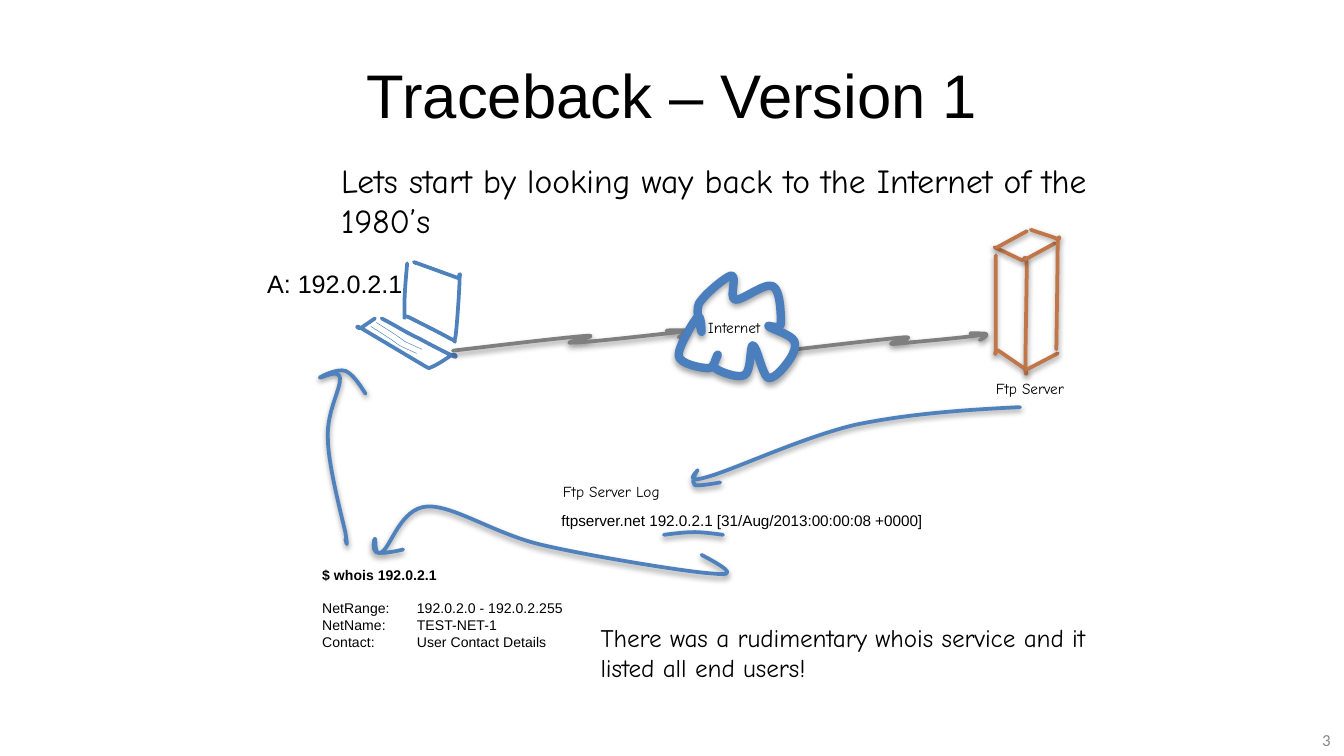
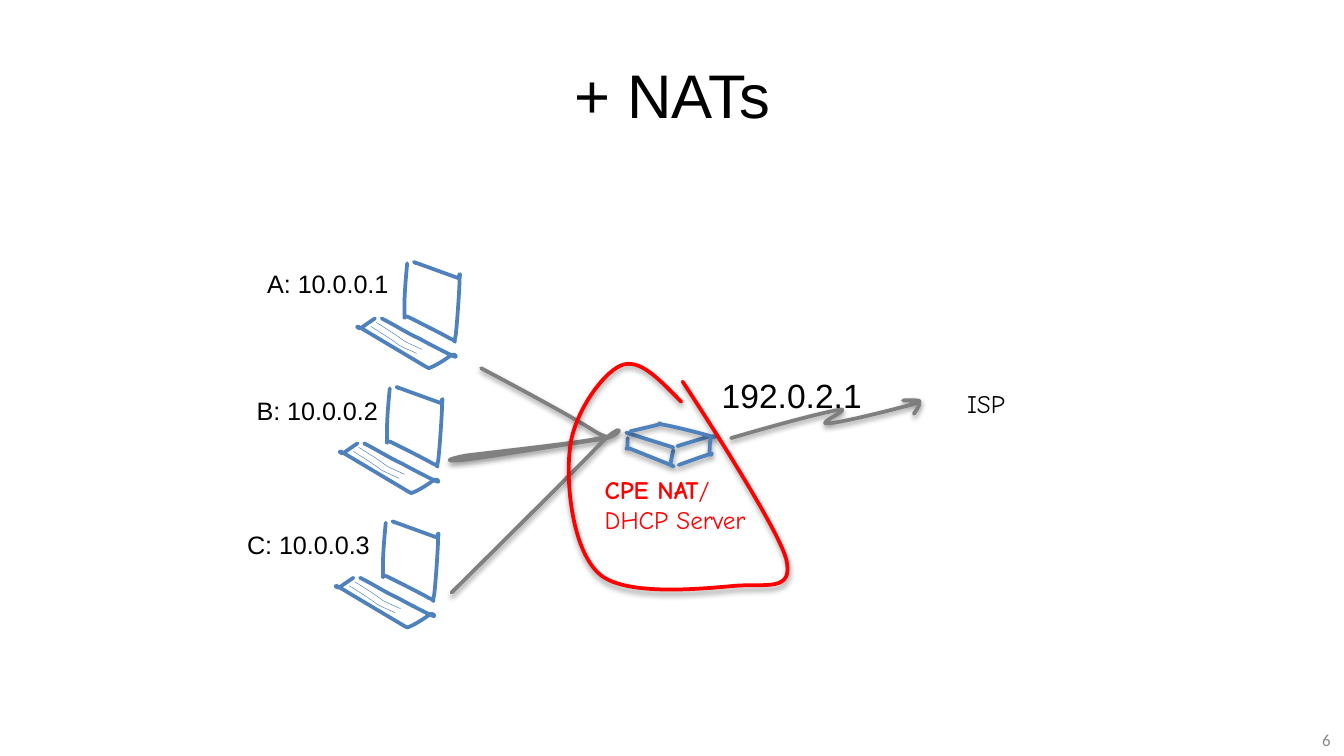
from lxml.etree import SubElement
from pptx import Presentation
from pptx.dml.color import RGBColor
from pptx.enum.text import MSO_ANCHOR as Anchor, MSO_AUTO_SIZE as AutoSize, PP_ALIGN as Align
from pptx.oxml.ns import qn
from pptx.util import Cm, Pt

BLUE, CLOUD_BLUE, ORANGE, GREY, MID_GREY, RED, BLACK, PALE = (
    "4F81BD", "4B7EBC", "C1764A", "7F7F7F", "808080", "FF0000", "000000", "898989")
SANS, HAND, FOOTER_FONT = "Arial", "Comic Neue", "Calibri"
GRID = 0.0254  # sketch unit in cm

# Sketches: M start, C cubic curves, L straight segments, Z close
LAPTOP_OUTLINE = [
    "M 303 196 C 302 207 301 218 301 225 301 231 301 234 301 236 302 238 298 234 304 236 "
    "310 239 330 249 335 252 341 254 337 257 339 250 340 243 342 214 342 207 "
    "343 200 341 207 341 207 L 308 195 310 196",
    "M 284 237 C 294 242 303 248 312 252 321 257 333 263 337 265 341 267 339 263 336 264 "
    "334 266 323 273 319 274 L 317 273 270 245 C 262 240 267 246 269 244 270 243 279 237 279 237",
]
KEY_ROW = "M 276 243 C 284 248 292 253 297 257 303 260 310 263 310 263"
KEY_ROW_STEP = (4, -3)

SERVER = [
    "M 741 190 C 741 219 741 247 741 259 741 270 739 258 743 261 746 263 759 272 762 274 "
    "765 275 763 285 763 272 763 259 764 211 764 198 763 185 763 196 759 193 755 191 740 184 740 184",
    "M 763 193 L 785 181",
    "M 764 275 L 787 263",
    "M 742 184 L 764 172",
    "M 767 171 C 775 174 783 176 787 178 790 180 787 170 787 184 787 197 786 260 786 260",
]
CLOUD = (
    "M 581 241 C 581 236 581 216 575 213 569 210 552 224 547 223 542 222 549 205 544 205 "
    "540 206 524 219 520 226 517 233 522 246 522 247 522 249 522 233 519 236 516 239 504 259 505 265 "
    "506 271 522 274 527 274 532 274 533 264 534 264 535 264 529 271 532 274 536 277 550 282 554 279 "
    "559 277 558 257 560 257 563 257 567 278 571 281 575 283 582 275 585 271 589 266 593 259 591 254 "
    "589 249 574 245 572 243 570 241 580 246 581 241 Z")
LAPTOP_LINK = (
    "M 337 261 C 379 256 422 251 436 250 451 249 414 256 426 255 438 255 496 248 508 247 "
    "519 245 495 246 496 246 496 246 509 246 511 247 512 248 505 251 505 251")
SERVER_LINK = (
    "M 592 260 C 626 256 661 252 673 251 685 251 655 256 665 256 674 255 722 251 731 249 "
    "741 248 721 248 722 248 722 248 732 249 734 249 735 250 729 253 729 253")
SERVER_TO_LOG = (
    "M 759 303 C 717 305 676 308 637 316 598 325 545 350 526 355 506 361 521 349 519 350 "
    "518 351 514 359 517 361 520 362 536 359 536 359")
LOG_UNDERLINE = "M 494 398 C 502 397 510 396 517 396 524 396 538 398 538 398"
LOG_TO_WHOIS = (
    "M 522 413 C 537 421 551 429 532 427 512 426 440 414 405 406 369 398 338 376 318 377 "
    "298 378 291 407 284 411 278 415 280 401 279 401 278 401 277 410 280 411 284 413 300 409 300 409")
WHOIS_TO_LAPTOP = (
    "M 257 401 C 258 405 259 409 257 396 254 383 244 345 244 326 243 306 254 289 253 281 "
    "252 274 238 282 238 281 239 280 251 274 257 276 262 278 267 285 272 293")
ROUTER = [
    "M 467 326 C 467 329 467 333 467 334 467 335 464 332 469 334 474 336 494 344 499 346 "
    "504 348 499 347 499 345 499 344 501 335 501 335",
    "M 466 322 L 501 333",
    "M 504 332 L 527 325",
    "M 469 321 C 477 319 486 317 490 316 494 315 487 314 493 316 500 317 524 323 530 325 "
    "536 326 529 323 529 326 528 328 528 336 528 338 528 340 532 336 528 338 524 339 505 346 505 346",
]
HOME_LINKS = (
    "M 358 274 C 392 292 427 311 441 320 455 329 458 323 442 327 426 330 363 337 347 339 "
    "331 342 330 344 347 342 364 340 431 329 447 327 464 325 466 311 447 330 429 349 336 441 336 441")
ISP_LINK = (
    "M 544 326 C 578 316 612 307 624 305 636 303 606 316 616 315 625 315 672 303 682 300 "
    "691 297 672 298 672 298 672 298 683 298 684 300 685 301 680 308 680 308")
NAT_LOOP = (
    "M 507 299 C 491 283 476 266 462 272 448 278 426 309 424 335 421 360 426 411 447 428 "
    "467 444 524 438 547 436 570 434 591 441 585 416 578 390 508 284 508 284")


def color(hex_code):
    return RGBColor.from_string(hex_code)


def apply(target, values):
    for key, value in values.items():
        setattr(target, key, value)


def trace(sketch):
    """Return the points, the kind of each segment, and whether the sketch is closed."""
    points, kinds, command, pending = [], [], "M", []
    for token in sketch.split():
        if token.isalpha():
            command = token
            continue
        pending.append(int(token))
        if len(pending) == (6 if command == "C" else 2):
            points += zip(pending[::2], pending[1::2])
            kinds.append(command)
            pending = []
    return points, kinds[1:], command == "Z"


def bend(outline, kinds):
    """Join each three line segments that belong to a curve into one cubic curve."""
    segments = iter(outline.findall(".//" + qn("a:lnTo")))
    for kind in kinds:
        first = next(segments)
        if kind == "C":
            first.tag = qn("a:cubicBezTo")
            for _ in range(2):
                following = next(segments)
                first.append(following[0])
                following.getparent().remove(following)


class Deck:
    def __init__(self):
        self.prs = Presentation()
        apply(self.prs, {"slide_width": Cm(25.4), "slide_height": Cm(14.29)})
        self.slide = None

    def new_slide(self, heading, number):
        self.slide = self.prs.slides.add_slide(self.prs.slide_layouts[5])
        title = self.slide.shapes.title
        apply(title, {"left": Cm(0.74), "top": Cm(0.58), "width": Cm(23.93), "height": Cm(2.39)})
        title.text_frame.text = heading
        title.text_frame.vertical_anchor = Anchor.MIDDLE
        paragraph = title.text_frame.paragraphs[0]
        paragraph.alignment = Align.CENTER
        self.style(paragraph.runs[0].font, 33, SANS)
        footer = self.text((19.48, 13.61, 5.92, 0.76), [number], 9, FOOTER_FONT, PALE, wrap=True)
        apply(footer, {"auto_size": AutoSize.NONE, "vertical_anchor": Anchor.MIDDLE})
        footer.paragraphs[0].alignment = Align.RIGHT

    def style(self, font, size, face, ink=BLACK, bold=False):
        apply(font, {"size": Pt(size), "name": face, "bold": bold})
        font.color.rgb = color(ink)

    def text(self, box, lines, size, face=SANS, ink=BLACK, wrap=False, bold_lead=False):
        """Each line is a string, or a tuple of strings for several runs."""
        frame = self.slide.shapes.add_textbox(*map(Cm, box)).text_frame
        apply(frame, {"word_wrap": wrap, "auto_size": AutoSize.SHAPE_TO_FIT_TEXT})
        for row, line in enumerate(lines):
            paragraph = frame.add_paragraph() if row else frame.paragraphs[0]
            for part, words in enumerate((line,) if isinstance(line, str) else line):
                run = paragraph.add_run()
                run.text = words
                self.style(run.font, size, face, ink, bold_lead and row == part == 0)
        return frame

    def stroke(self, sketch, ink, width=2, shift=(0, 0), shadow=(38, 1.6)):
        """Draw a hand-drawn line; shadow is opacity in percent and distance in points."""
        points, kinds, closed = trace(sketch)
        start, *rest = [(Cm((x + shift[0]) * GRID), Cm((y + shift[1]) * GRID)) for x, y in points]
        builder = self.slide.shapes.build_freeform(*start)
        builder.add_line_segments(rest, close=closed)
        line = builder.convert_to_shape()
        line.fill.background()
        line.line.color.rgb = color(ink)
        line.line.width = Pt(width)
        line.shadow.inherit = False
        properties = line._element.spPr
        bend(properties, kinds)
        properties.find(qn("a:ln")).set("cap", "rnd")
        if shadow:
            opacity, distance = shadow
            outer = SubElement(properties.find(qn("a:effectLst")), qn("a:outerShdw"), blurRad=str(Pt(3.1)),
                               dist=str(Pt(distance)), dir="5400000", rotWithShape="0")
            black = SubElement(outer, qn("a:srgbClr"), val=BLACK)
            SubElement(black, qn("a:alpha"), val=str(opacity * 1000))
        return line

    def drawing(self, sketches, ink):
        self.slide.shapes.add_group_shape([self.stroke(s, ink) for s in sketches])

    def laptop(self, dx=0, dy=0):
        strokes = [self.stroke(s, BLUE, shift=(dx, dy), shadow=None) for s in LAPTOP_OUTLINE]
        for row in range(2):
            shift = (dx + row * KEY_ROW_STEP[0], dy + row * KEY_ROW_STEP[1])
            strokes.append(self.stroke(KEY_ROW, BLUE, 0.25, shift, None))
        self.slide.shapes.add_group_shape(strokes)


def add_traceback(deck):
    deck.new_slide("Traceback – Version 1", "3")

    # Path from the laptop to the server
    deck.laptop()
    deck.text((4.8, 4.95, 3.1, 0.84), ["A: 192.0.2.1"], 13.5)
    deck.stroke(LAPTOP_LINK, GREY)
    deck.stroke(SERVER_LINK, GREY)
    deck.stroke(CLOUD, CLOUD_BLUE, 4.5, shadow=(35, 1.8))
    deck.drawing(SERVER, ORANGE)
    deck.text((18.57, 7.04, 2.18, 0.61), ["Ftp Server"], 8.2, HAND)
    deck.text((13.13, 5.89, 1.75, 0.61), ["Internet"], 8.2, HAND)
    deck.text((6.2, 2.9, 15.47, 1.8),
              ["Lets start by looking way back to the Internet of the 1980’s"], 18, HAND, wrap=True)

    # Server log
    deck.text((10.36, 9.53, 7.52, 0.61), ["ftpserver.net 192.0.2.1 [31/Aug/2013:00:00:08 +0000]"], 8.2)
    deck.text((10.39, 8.99, 2.92, 0.61), ["Ftp Server Log"], 8.2, HAND)
    deck.stroke(SERVER_TO_LOG, BLUE)
    deck.stroke(LOG_UNDERLINE, BLUE)

    # Whois lookup
    whois = deck.text((5.84, 10.59, 5.05, 2.18), [
        "$ whois 192.0.2.1",
        "NetRange:\t192.0.2.0 - 192.0.2.255",
        "NetName:\tTEST-NET-1",
        "Contact:\tUser Contact Details"], 7.5, bold_lead=True)
    for record in whois.paragraphs[1:]:
        tabs = SubElement(record._p.get_or_add_pPr(), qn("a:tabLst"))
        SubElement(tabs, qn("a:tab"), pos=str(Cm(1.79)), algn="l")
    whois.paragraphs[1].space_before = Pt(8.6)
    deck.stroke(LOG_TO_WHOIS, BLUE)
    deck.text((11.1, 11.63, 10.44, 1.42),
              ["There was a rudimentary whois service and it listed all end users!"], 13.5, HAND, wrap=True)
    deck.stroke(WHOIS_TO_LAPTOP, BLUE)


def add_nats(deck):
    deck.new_slide("+ NATs", "6")

    # Home network
    for dx, dy in ((-13, 93), (-16, 193), (0, 0)):
        deck.laptop(dx, dy)
    deck.drawing(ROUTER, BLUE)
    deck.stroke(HOME_LINKS, MID_GREY)
    for host, left, top in (("A: 10.0.0.1", 4.8, 4.95), ("B: 10.0.0.2", 4.6, 7.34),
                            ("C: 10.0.0.3", 4.42, 9.88)):
        deck.text((left, top, 2.85, 0.84), [host], 13.5)
    deck.text((11.18, 8.84, 3.96, 1.98), [("CPE NAT", "/"), "DHCP Server"],
              13.5, HAND, RED, bold_lead=True)

    # Provider side
    deck.stroke(ISP_LINK, GREY)
    deck.text((13.39, 6.96, 3.18, 1.02), ["192.0.2.1"], 18)
    deck.text((18.03, 7.21, 1.45, 0.84), ["ISP"], 13.5, HAND)
    deck.stroke(NAT_LOOP, RED)


def main():
    deck = Deck()
    add_traceback(deck)
    add_nats(deck)
    deck.prs.save("out.pptx")


if __name__ == "__main__":
    main()
